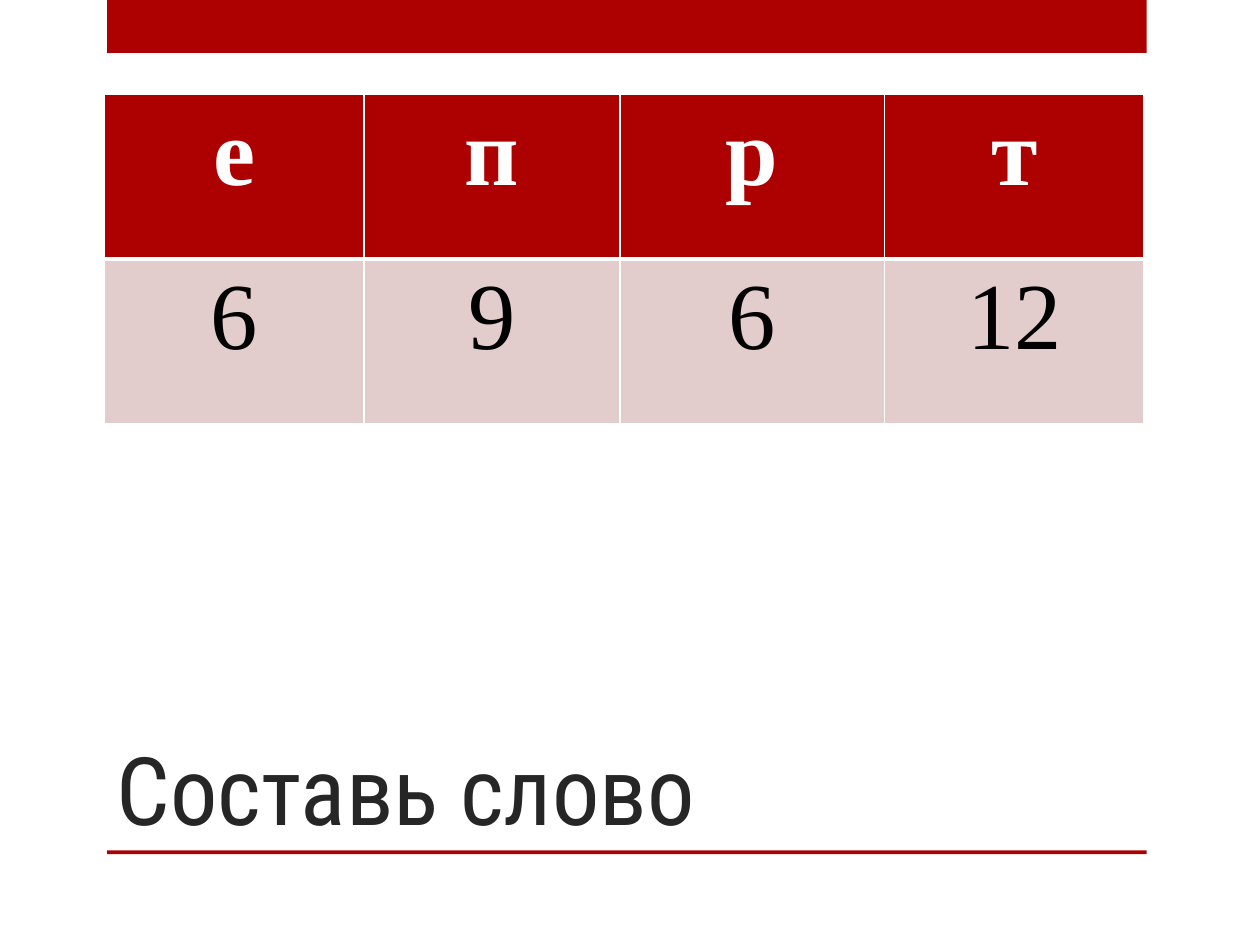
from dataclasses import dataclass

from lxml.etree import SubElement
from pptx import Presentation
from pptx.dml.color import RGBColor
from pptx.enum.shapes import MSO_SHAPE as Shape
from pptx.enum.text import MSO_ANCHOR as Anchor, PP_ALIGN as Align
from pptx.oxml.ns import qn
from pptx.util import Inches, Pt

WIDTH, HEIGHT = 10, 7.5
COLORS = {"red": "AD0101", "pink": "E3CCCC", "white": "FFFFFF",
          "black": "000000", "title": "262626"}
TEXT_SIZE = 54


@dataclass(frozen=True)
class Box:
    """A rectangle in shares of the slide's width and height."""
    left: float
    top: float
    width: float
    height: float

    def lengths(self) -> list[int]:
        return [Inches(self.left * WIDTH), Inches(self.top * HEIGHT),
                Inches(self.width * WIDTH), Inches(self.height * HEIGHT)]


@dataclass(frozen=True)
class TableRow:
    texts: tuple[str, ...]
    fill: str
    ink: str
    bold: bool
    top_line: float
    bottom_line: float


BARS = (Box(0.085, 0, 0.825, 0.056), Box(0.085, 0.9, 0.825, 0.004))
TITLE_BOX = Box(0.083, 5 / HEIGHT, 0.742, 1.75 / HEIGHT)
TABLE_BOX = Box(0.083, 0.1, 0.825, 2.61 / HEIGHT)
COLUMN_SHARES = (0.206, 0.203, 0.21, 0.206)
ROWS = (
    TableRow(("е", "п", "р", "т"), "red", "white", True, 1, 3),
    TableRow(("6", "9", "6", "12"), "pink", "black", False, 3, 1),
)


def rgb(name: str) -> RGBColor:
    return RGBColor.from_string(COLORS[name])


def draw_bar(slide, box: Box) -> None:
    bar = slide.shapes.add_shape(Shape.RECTANGLE, *box.lengths())
    bar.shadow.inherit = False
    bar.fill.solid()
    bar.fill.fore_color.rgb = rgb("red")
    bar.line.fill.background()


def add_text(paragraph, text: str, font: str, color: str, bold: bool = False) -> None:
    run = paragraph.add_run()
    run.text = text
    run.font.name = font
    run.font.size = Pt(TEXT_SIZE)
    run.font.bold = bold
    run.font.color.rgb = rgb(color)


def set_borders(cell, top: float, bottom: float) -> None:
    """Add white borders, which must stand before the fill in the cell's XML."""
    properties = cell._tc.get_or_add_tcPr()
    sides = {"lnL": 1, "lnR": 1, "lnT": top, "lnB": bottom}
    for position, (side, points) in enumerate(sides.items()):
        border = SubElement(properties, qn(f"a:{side}"), w=str(Pt(points)))
        fill = SubElement(border, qn("a:solidFill"))
        SubElement(fill, qn("a:srgbClr"), val=COLORS["white"])
        properties.insert(position, border)


def draw_table(slide) -> None:
    frame = slide.shapes.add_table(len(ROWS), len(COLUMN_SHARES), *TABLE_BOX.lengths())
    table = frame.table
    for column, share in zip(table.columns, COLUMN_SHARES):
        column.width = Inches(share * WIDTH)
    for r, row in enumerate(ROWS):
        for c, text in enumerate(row.texts):
            cell = table.cell(r, c)
            cell.fill.solid()
            cell.fill.fore_color.rgb = rgb(row.fill)
            set_borders(cell, row.top_line, row.bottom_line)
            paragraph = cell.text_frame.paragraphs[0]
            paragraph.alignment = Align.CENTER
            add_text(paragraph, text, "Times New Roman", row.ink, row.bold)


def draw_title(slide) -> None:
    frame = slide.shapes.add_textbox(*TITLE_BOX.lengths()).text_frame
    frame.word_wrap = True
    frame.vertical_anchor = Anchor.BOTTOM
    add_text(frame.paragraphs[0], "Составь слово", "Roboto Condensed", "title")


def main() -> None:
    deck = Presentation()
    deck.slide_width, deck.slide_height = Inches(WIDTH), Inches(HEIGHT)
    slide = deck.slides.add_slide(deck.slide_layouts[6])
    for box in BARS:
        draw_bar(slide, box)
    draw_title(slide)
    draw_table(slide)
    deck.save("out.pptx")


if __name__ == "__main__":
    main()
